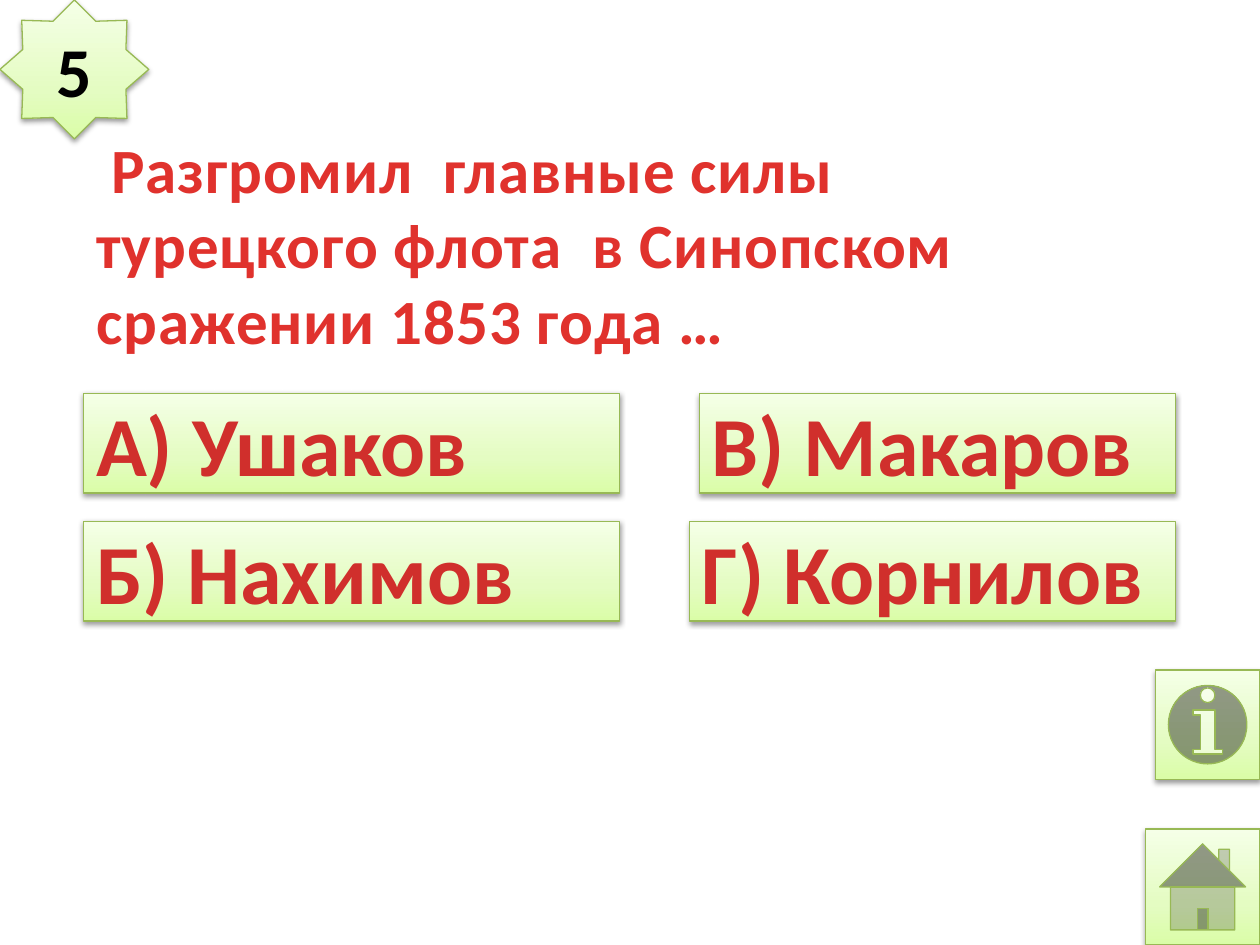
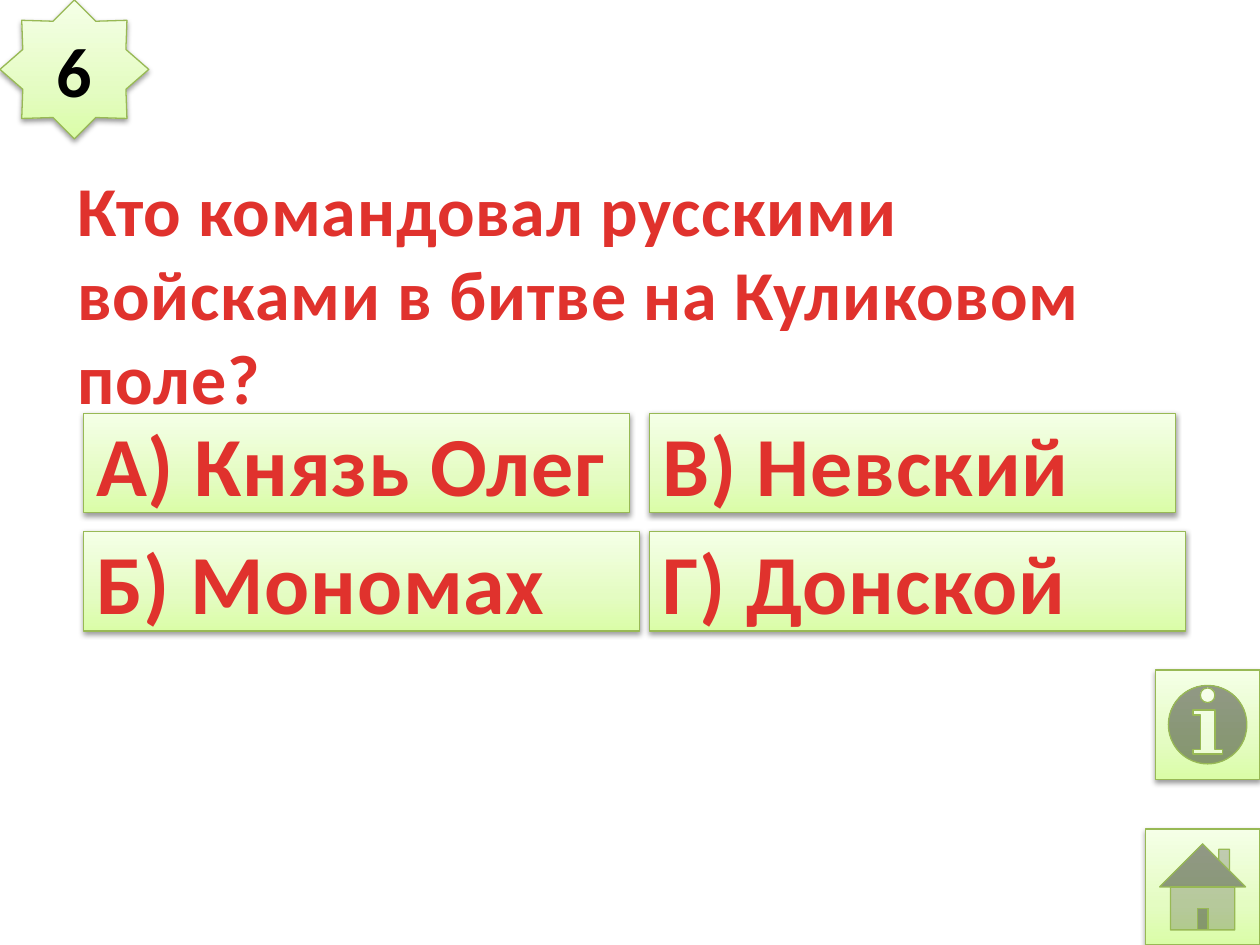
import pptx
import pptx.dml.color
import pptx.enum.shapes
import pptx.enum.text
import pptx.oxml
import pptx.oxml.ns
import pptx.util
from pptx.util import Cm

SHAPES = pptx.enum.shapes.MSO_SHAPE
ALIGN = pptx.enum.text.PP_ALIGN
FONT = "Calibri"
COLORS = {
    "lime": "DAFDA7",
    "pale lime": "E4FCC2",
    "mist": "F5FFE7",
    "outline": "98B955",
    "coral": "FC7C7A",
    "red": "D02F2C",
    "deep red": "C70500",
    "scarlet": "E0322D",
    "brick": "A2201C",
    "black": "000000",
}
PANEL_STOPS = [(0, "lime"), (35, "pale lime"), (100, "mist")]
SCARLET_STOPS = [(25, "scarlet"), (100, "brick")]
RED_STOPS = [(0, "coral"), (75, "red"), (100, "deep red")]
ANSWER_HEIGHT = 2.01

QUESTIONS = [
    {
        "number": "5",
        "text": " Разгромил  главные силы\vтурецкого флота  в Синопском сражении 1853 года …",
        "box": (1.69, 3.32, 22.02, 3.18),
        "size": 36,
        "answer_stops": RED_STOPS,
        "answer_spacing": 0,
        "answers": [
            ("А) Ушаков", 1.69, 7.93, 10.8),
            ("Б) Нахимов", 1.69, 10.51, 10.8),
            ("В) Макаров", 14.1, 7.93, 9.6),
            ("Г) Корнилов", 13.9, 10.51, 9.8),
        ],
    },
    {
        "number": "6",
        "text": "Кто командовал русскими войсками в битве на Куликовом поле?",
        "box": (1.3, 4.31, 21.79, 3.18),
        "size": 40,
        "answer_stops": SCARLET_STOPS,
        "answer_spacing": 0.5,
        "answers": [
            ("А) Князь Олег", 1.69, 8.33, 11),
            ("Б) Мономах", 1.69, 10.71, 11.2),
            ("В) Невский", 13.1, 8.33, 10.6),
            ("Г) Донской", 13.1, 10.71, 10.8),
        ],
    },
]


def rgb(name):
    return pptx.dml.color.RGBColor.from_string(COLORS[name])


def gradient(stops, angle):
    stop_xml = "".join(
        f'<a:gs pos="{position * 1000}"><a:srgbClr val="{COLORS[name]}"/></a:gs>'
        for position, name in stops
    )
    return pptx.oxml.parse_xml(
        f'<a:gradFill {pptx.oxml.ns.nsdecls("a")}><a:gsLst>{stop_xml}</a:gsLst>'
        f'<a:lin ang="{angle * 60000}" scaled="0"/></a:gradFill>'
    )


def add_shadow(shape):
    shape.shadow.inherit = False
    effects = shape._element.spPr.find(pptx.oxml.ns.qn("a:effectLst"))
    effects.append(pptx.oxml.parse_xml(
        f'<a:outerShdw {pptx.oxml.ns.nsdecls("a")} blurRad="40000" dist="20000" '
        'dir="5400000" rotWithShape="0"><a:srgbClr val="000000">'
        '<a:alpha val="38000"/></a:srgbClr></a:outerShdw>'
    ))


def add_panel(slide, kind, left, top, width, height):
    shape = slide.shapes.add_shape(kind, Cm(left), Cm(top), Cm(width), Cm(height))
    shape._element.spPr.insert(2, gradient(PANEL_STOPS, 270))
    shape.line.color.rgb = rgb("outline")
    shape.line.width = pptx.util.Pt(0.75)
    add_shadow(shape)
    return shape


def write_text(shape, text, size, alignment=ALIGN.LEFT):
    frame = shape.text_frame
    frame.text = text
    frame.word_wrap = True
    frame.auto_size = pptx.enum.text.MSO_AUTO_SIZE.NONE
    frame.vertical_anchor = pptx.enum.text.MSO_ANCHOR.MIDDLE
    paragraph = frame.paragraphs[0]
    paragraph.alignment = alignment
    paragraph.font.name = FONT
    paragraph.font.size = pptx.util.Pt(size)
    paragraph.font.bold = True
    return paragraph


def paint_runs(paragraph, stops, spacing):
    for run in paragraph.runs:
        properties = run._r.get_or_add_rPr()
        properties.insert(0, gradient(stops, 90))
        if spacing:
            properties.set("spc", str(int(spacing * 100)))


def add_question_text(slide, question):
    title = slide.shapes.title
    title.left, title.top, title.width, title.height = map(Cm, question["box"])
    paragraph = write_text(title, question["text"], question["size"])
    paint_runs(paragraph, SCARLET_STOPS, 0.5)


def add_answers(slide, question):
    for text, left, top, width in question["answers"]:
        box = add_panel(slide, SHAPES.RECTANGLE, left, top, width, ANSWER_HEIGHT)
        paragraph = write_text(box, text, 48)
        paint_runs(paragraph, question["answer_stops"], question["answer_spacing"])


def add_number_star(slide, number):
    star = add_panel(slide, SHAPES.STAR_8_POINT, 0, 0, 3, 2.8)
    paragraph = write_text(star, number, 40, ALIGN.CENTER)
    paragraph.font.color.rgb = rgb("black")


def add_buttons(slide):
    add_panel(slide, SHAPES.ACTION_BUTTON_HOME, 23.09, 16.71, 2.31, 2.34)
    add_panel(slide, SHAPES.ACTION_BUTTON_INFORMATION, 23.29, 13.51, 2.11, 2.2)


def main():
    presentation = pptx.Presentation()
    presentation.slide_width = Cm(25.4)
    presentation.slide_height = Cm(19.05)
    for question in QUESTIONS:
        slide = presentation.slides.add_slide(presentation.slide_layouts[5])
        add_question_text(slide, question)
        add_answers(slide, question)
        add_number_star(slide, question["number"])
        add_buttons(slide)
    presentation.save("out.pptx")


if __name__ == "__main__":
    main()
